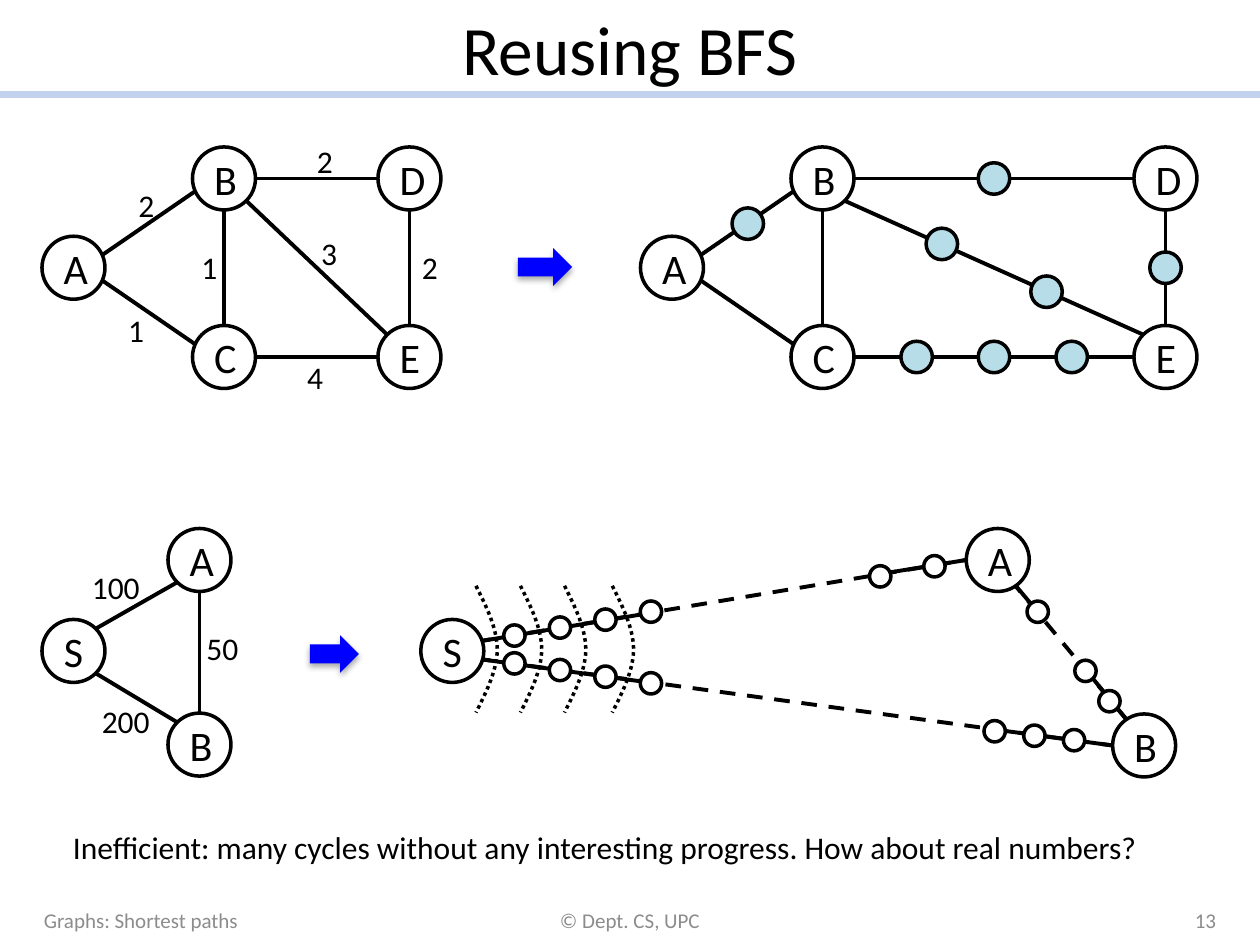
from lxml import etree
from pptx import Presentation
from pptx.dml.color import RGBColor
from pptx.enum.dml import MSO_LINE_DASH_STYLE as Dash
from pptx.enum.shapes import MSO_CONNECTOR, MSO_SHAPE
from pptx.enum.text import MSO_ANCHOR, MSO_AUTO_SIZE, PP_ALIGN
from pptx.oxml.ns import qn
from pptx.util import Pt

BLACK = RGBColor(0x00, 0x00, 0x00)
WHITE = RGBColor(0xFF, 0xFF, 0xFF)
GREY = RGBColor(0x8C, 0x8C, 0x8C)
BLUE = RGBColor(0x00, 0x00, 0xFF)
PALE_BLUE = RGBColor(0xC2, 0xD1, 0xED)
CYAN = RGBColor(0xB7, 0xDE, 0xE8)

RADIUS = 18
DIAG = RADIUS * 0.71
# Compass points on the rim of a node
RIM = {"n": (0, -RADIUS), "s": (0, RADIUS), "w": (-RADIUS, 0), "e": (RADIUS, 0),
       "nw": (-DIAG, -DIAG), "ne": (DIAG, -DIAG),
       "sw": (-DIAG, DIAG), "se": (DIAG, DIAG)}

FIVE_EDGES = ["C se A nw", "A sw B ne", "B e D w", "D s E n",
              "C e E w", "B s C n", "B se E nw"]
TRIANGLE_EDGES = ["A s B n", "S ne A sw", "S se B nw"]


def write(sp, text, size, color=BLACK, align=PP_ALIGN.LEFT):
    p = sp.text_frame.paragraphs[0]
    p.alignment = align
    r = p.add_run()
    r.text = text
    for name, value in {"name": "Calibri", "size": Pt(size)}.items():
        setattr(r.font, name, value)
    r.font.color.rgb = color


def add_text(s, text, box, size, color=BLACK, align=PP_ALIGN.LEFT):
    sp = s.shapes.add_textbox(*map(Pt, box))
    for name, value in {"word_wrap": True, "vertical_anchor": MSO_ANCHOR.MIDDLE}.items():
        setattr(sp.text_frame, name, value)
    write(sp, text, size, color, align)


def add_label(s, text, x, y, width=None):
    width = width or 15 + 9.1 * len(text)
    sp = s.shapes.add_textbox(Pt(x), Pt(y), Pt(width), Pt(28.8))
    for name, value in {"word_wrap": False,
                        "auto_size": MSO_AUTO_SIZE.SHAPE_TO_FIT_TEXT}.items():
        setattr(sp.text_frame, name, value)
    write(sp, text, 18)


def add_line(s, start, end, color=BLACK, width=2.25, dash=None):
    line = s.shapes.add_connector(MSO_CONNECTOR.STRAIGHT, *map(Pt, (*start, *end)))
    line.line.color.rgb = color
    line.line.width = Pt(width)
    if dash:
        line.line.dash_style = dash
    etree.SubElement(line._element.spPr, qn("a:effectLst"))


def add_circle(s, center, diameter, fill=WHITE):
    x, y = (c - diameter / 2 for c in center)
    sp = s.shapes.add_shape(MSO_SHAPE.OVAL, Pt(x), Pt(y), Pt(diameter), Pt(diameter))
    sp.shadow.inherit = False
    if fill is None:
        sp.fill.background()
    else:
        sp.fill.solid()
        sp.fill.fore_color.rgb = fill
    sp.line.color.rgb = BLACK
    sp.line.width = Pt(2)
    return sp


def add_nodes(s, nodes):
    for name, center in nodes.items():
        sp = add_circle(s, center, 2 * RADIUS, None if name in "DE" else WHITE)
        sp.text_frame.vertical_anchor = MSO_ANCHOR.MIDDLE
        write(sp, name, 24, align=PP_ALIGN.CENTER)


def rim_point(center, side):
    return tuple(c + d for c, d in zip(center, RIM[side]))


def add_graph(s, nodes, edges):
    for edge in edges:
        a, a_side, b, b_side = edge.split()
        add_line(s, rim_point(nodes[a], a_side), rim_point(nodes[b], b_side))
    add_nodes(s, nodes)


def add_arrow(s, x, y, width):
    sp = s.shapes.add_shape(MSO_SHAPE.RIGHT_ARROW, Pt(x), Pt(y), Pt(width), Pt(21.6))
    sp.fill.solid()
    sp.fill.fore_color.rgb = BLUE
    sp.line.fill.background()
    sp.shadow.inherit = False
    effects = sp._element.spPr.find(qn("a:effectLst"))
    shadow = etree.SubElement(effects, qn("a:outerShdw"), blurRad=str(Pt(3.5)),
                              dist=str(Pt(2.2)), dir="5400000", rotWithShape="0")
    color = etree.SubElement(shadow, qn("a:srgbClr"), val=str(BLACK))
    etree.SubElement(color, qn("a:alpha"), val="32000")


def add_wave(s, x, y, width=12.2, half=36.2, steps=10):
    # Upper half of the bulge as a cubic curve, mirrored for the lower half
    upper = []
    for i in range(steps + 1):
        t = i / steps
        b1, b2, b3 = 3 * t * (1 - t) ** 2, 3 * t * t * (1 - t), t ** 3
        upper.append((width * (b1 / 2 + b2 + b3), half * (b1 / 3 + b2 * 0.68 + b3)))
    lower = [(dx, 2 * half - dy) for dx, dy in reversed(upper[:-1])]
    points = [(Pt(x + dx), Pt(y + dy)) for dx, dy in upper + lower]
    builder = s.shapes.build_freeform(*points[0], scale=1.0)
    builder.add_line_segments(points[1:], close=False)
    sp = builder.convert_to_shape()
    sp.shadow.inherit = False
    sp.fill.background()
    sp.line.color.rgb = BLACK
    sp.line.width = Pt(2)
    sp.line.dash_style = Dash.ROUND_DOT


def add_wavefront(s):
    nodes = {"A": (570.2, 320), "B": (653.8, 426), "S": (258.5, 372)}
    s_w, a_w, b_w = (rim_point(nodes[n], "w") for n in "SAB")
    a_nw, b_se = rim_point(nodes["A"], "nw"), rim_point(nodes["B"], "se")
    # Long dashed edges, solid where the dots are drawn
    for start, end in [(s_w, a_w), (s_w, b_w), (a_nw, b_se)]:
        add_line(s, start, end, dash=Dash.DASH)
    for start, end in [(s_w, (378, 349.2)), (s_w, (378, 391)), (a_w, (496.8, 329)),
                       (a_nw, (589, 344.9)), ((624.2, 387.4), b_se),
                       ((573.8, 417.6), b_w)]:
        add_line(s, start, end)
    add_nodes(s, nodes)
    for x in (272, 297.4, 322.6, 349.9):
        add_wave(s, x, 334.8)
    # Intermediate vertices
    dots = [(503, 329.4), (534, 323.6), (593, 349.6), (620.3, 383.4), (634, 400.7)]
    dots += [(294 + 26 * i, 363.2 - 4.55 * i) for i in range(4)]
    dots += [(294 + 26 * i, 379.1 + 3.8 * i) for i in range(4)]
    dots += [(568.4 + 22.7 * i, 417.9 + 2.55 * i) for i in range(3)]
    for center in dots:
        add_circle(s, center, 12.2)


def main():
    prs = Presentation()
    prs.slide_width, prs.slide_height = Pt(720), Pt(540)
    s = prs.slides.add_slide(prs.slide_layouts[6])

    # Title and footer
    add_line(s, (0, 54), (720, 54), PALE_BLUE, 4)
    add_text(s, "Reusing BFS", (36, 0, 648, 54), 39.6, align=PP_ALIGN.CENTER)
    for text, x, width, align in [
            ("Graphs: Shortest paths", 18, 168, PP_ALIGN.LEFT),
            ("© Dept. CS, UPC", 246, 228, PP_ALIGN.CENTER),
            ("13", 534, 168, PP_ALIGN.RIGHT)]:
        add_text(s, text, (x, 511.2, width, 28.8), 12, GREY, align)

    # Weighted graph and its unit-length version
    for a_x, b_x, d_x in [(42, 128, 234), (384, 470, 666)]:
        add_graph(s, {"A": (a_x, 153), "B": (b_x, 102), "C": (b_x, 204),
                      "D": (d_x, 102), "E": (d_x, 204)}, FIVE_EDGES)
    for center in [(427.3, 127.8), (568, 102), (523.8, 204), (568, 204), (612.4, 204),
                   (538.2, 139.4), (598, 166.7), (666, 153)]:
        add_circle(s, center, 18, CYAN)
    add_arrow(s, 295.9, 141.8, 31)

    # Triangle with long edges and its breadth-first wavefront
    add_graph(s, {"A": (114, 320), "B": (114, 425.5), "S": (42, 372)}, TRIANGLE_EDGES)
    add_wavefront(s)
    add_arrow(s, 177.1, 362.9, 28)

    # Edge weights
    for text, x, y in [("2", 72, 103), ("2", 174, 77.8), ("2", 234, 138.2),
                       ("1", 66.2, 174.2), ("1", 108, 138.2), ("4", 168.5, 200.9),
                       ("3", 176.4, 130.3), ("100", 45.4, 321.1),
                       ("200", 51.1, 397.4), ("50", 110.9, 355.7)]:
        add_label(s, text, x, y)

    # Conclusion
    add_label(s, "Inefficient: many cycles without any interesting progress. "
                 "How about real numbers?", 34.6, 469.4, 634.3)
    prs.save("out.pptx")


if __name__ == "__main__":
    main()
